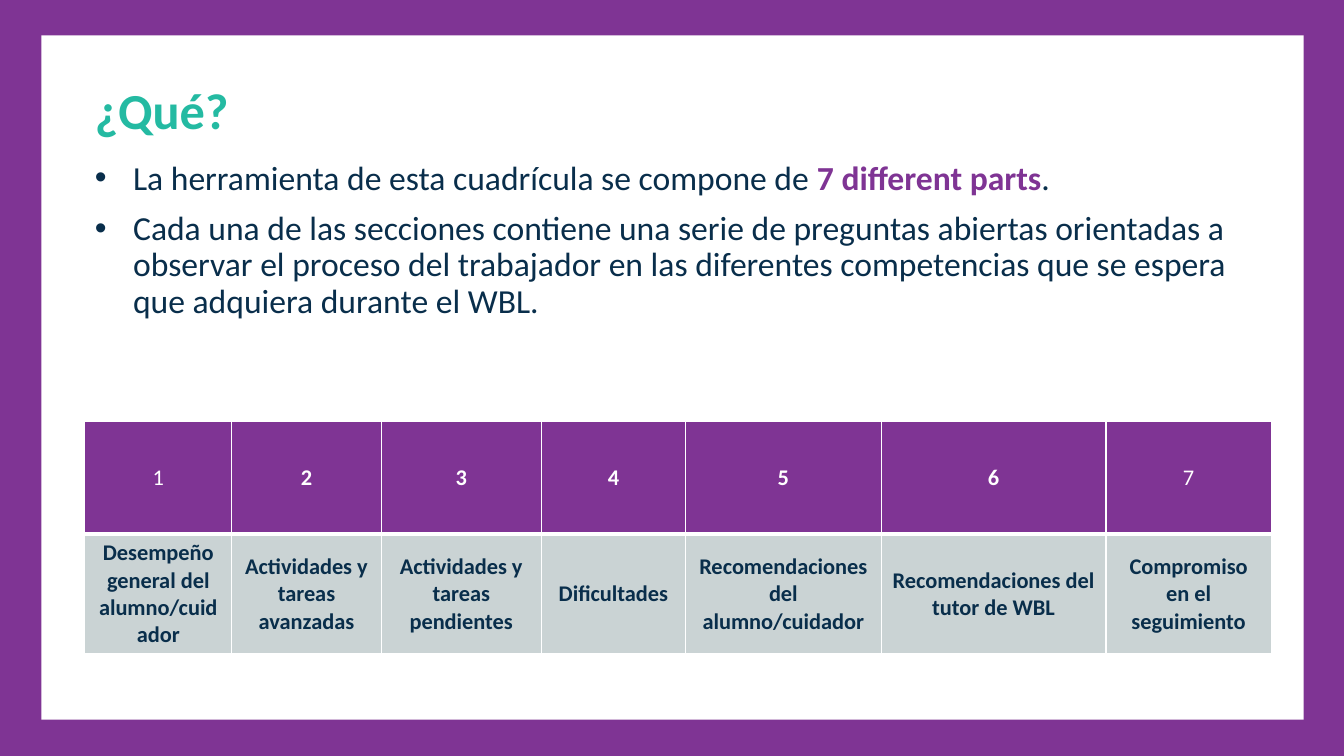
"""Build the slide that presents the seven parts of the grid tool."""
from lxml import etree
from pptx import Presentation
from pptx.dml.color import RGBColor
from pptx.enum import shapes, text
from pptx.oxml import ns
from pptx.util import Inches, Pt

PURPLE, TEAL, NAVY, GRAY, WHITE = "7F3494", "24BAA2", "092E4B", "CAD3D4", "FFFFFF"


def color(hex_code):
    return RGBColor.from_string(hex_code)


def format_run(run, size, hex_code, bold):
    run.font.name = "Calibri"
    run.font.size = Pt(size)
    run.font.color.rgb = color(hex_code)
    run.font.bold = bold


presentation = Presentation()
presentation.slide_width = Inches(13.33)
presentation.slide_height = Inches(7.5)
slide = presentation.slides.add_slide(presentation.slide_layouts[1])

panels = [((0, 0, 13.33, 7.5), PURPLE), ((0.41, 0.35, 12.52, 6.79), WHITE)]
for position, (box, fill) in enumerate(panels, start=2):
    panel = slide.shapes.add_shape(shapes.MSO_SHAPE.RECTANGLE, *map(Inches, box))
    panel.shadow.inherit = False
    panel.fill.solid()
    panel.fill.fore_color.rgb = color(fill)
    panel.line.fill.background()
    slide.shapes._spTree.insert(position, panel._element)

title, body = slide.shapes.title, slide.placeholders[1]
placeholder_boxes = [(title, (0.84, 0.8, 11.59, 0.49)), (body, (0.84, 1.55, 11.87, 2.37))]
for placeholder, box in placeholder_boxes:
    placeholder.left, placeholder.top, placeholder.width, placeholder.height = map(Inches, box)
    placeholder.text_frame.vertical_anchor = text.MSO_ANCHOR.TOP
    placeholder.text_frame.auto_size = text.MSO_AUTO_SIZE.NONE
    placeholder.text_frame.word_wrap = True

title.text_frame.text = "¿Qué?"
heading = title.text_frame.paragraphs[0]
heading.alignment = text.PP_ALIGN.LEFT
heading.line_spacing = 0.9
format_run(heading.runs[0], 36, TEAL, True)

bullets = [
    [("La herramienta de esta cuadrícula se compone de ", NAVY, False),
     ("7 different parts", PURPLE, True),
     (".", NAVY, False)],
    [("Cada una de las secciones contiene una serie de preguntas abiertas orientadas a "
      "observar el proceso del trabajador en las diferentes competencias que se espera "
      "que adquiera durante el WBL.", NAVY, False)],
]
body.text_frame.text = "\n" * (len(bullets) - 1)
for paragraph, pieces in zip(body.text_frame.paragraphs, bullets):
    paragraph.line_spacing = 0.9
    paragraph.space_before = Pt(10)
    properties = paragraph._p.get_or_add_pPr()
    properties.set("marL", str(Inches(0.38)))
    properties.set("indent", str(-Inches(0.38)))
    bullet_color = etree.SubElement(properties, ns.qn("a:buClr"))
    etree.SubElement(bullet_color, ns.qn("a:srgbClr"), val=NAVY)
    etree.SubElement(properties, ns.qn("a:buFont"), typeface="Arial")
    etree.SubElement(properties, ns.qn("a:buChar"), char="•")
    for words, hex_code, bold in pieces:
        run = paragraph.add_run()
        run.text = words
        format_run(run, 24, hex_code, bold)

parts = [
    ("Desempeño general del alumno/cuidador", 1.46),
    ("Actividades y tareas avanzadas", 1.48),
    ("Actividades y tareas pendientes", 1.59),
    ("Dificultades", 1.43),
    ("Recomendaciones del alumno/cuidador", 1.94),
    ("Recomendaciones del tutor de WBL", 2.23),
    ("Compromiso en el seguimiento", 1.64),
]
total_width = sum(width for _, width in parts)
table = slide.shapes.add_table(
    2, len(parts), Inches(0.84), Inches(4.18), Inches(total_width), Inches(2.3)).table
table.horz_banding = False
table.rows[0].height = Inches(1.12)
table.rows[1].height = Inches(1.18)

for column, (part, width) in enumerate(parts):
    table.columns[column].width = Inches(width)
    number_bold = 0 < column < len(parts) - 1
    rows = [
        (str(column + 1), PURPLE, WHITE, number_bold, {"lnL": 1, "lnR": 1, "lnT": 1, "lnB": 3}),
        (part, GRAY, NAVY, True, {"lnL": 1, "lnR": 1, "lnT": 3, "lnB": 1}),
    ]
    for row, (words, fill, ink, bold, borders) in enumerate(rows):
        cell = table.cell(row, column)
        cell.text_frame.text = words
        cell.vertical_anchor = text.MSO_ANCHOR.MIDDLE
        paragraph = cell.text_frame.paragraphs[0]
        paragraph.alignment = text.PP_ALIGN.CENTER
        format_run(paragraph.runs[0], 16, ink, bold)
        for side, points in borders.items():
            border = etree.SubElement(
                cell._tc.get_or_add_tcPr(), ns.qn(f"a:{side}"), w=str(Pt(points)))
            border_fill = etree.SubElement(border, ns.qn("a:solidFill"))
            etree.SubElement(border_fill, ns.qn("a:srgbClr"), val=WHITE)
        cell.fill.solid()
        cell.fill.fore_color.rgb = color(fill)

presentation.save("out.pptx")
